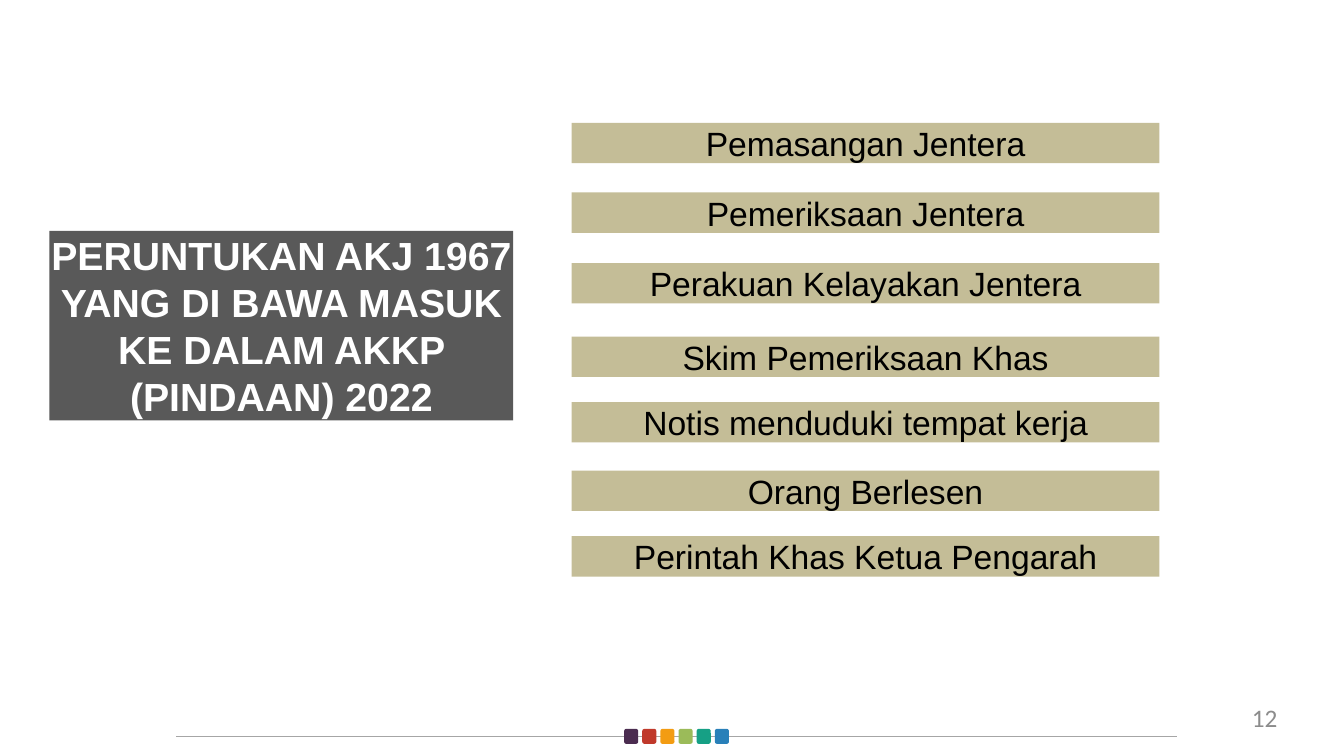
from dataclasses import dataclass

from lxml import etree
from pptx import Presentation
from pptx.dml.color import RGBColor
from pptx.enum.shapes import MSO_CONNECTOR, MSO_SHAPE
from pptx.enum.text import MSO_ANCHOR, MSO_AUTO_SIZE, PP_ALIGN
from pptx.oxml.ns import qn
from pptx.util import Inches, Pt

RECTANGLE = MSO_SHAPE.RECTANGLE
ROUNDED = MSO_SHAPE.ROUNDED_RECTANGLE
STRAIGHT = MSO_CONNECTOR.STRAIGHT
TOP = MSO_ANCHOR.TOP
NO_AUTOFIT = MSO_AUTO_SIZE.NONE
CENTER = PP_ALIGN.CENTER
RIGHT = PP_ALIGN.RIGHT
TITLE_ONLY = 5


@dataclass(frozen=True)
class Theme:
    heading_font: str = "Arial"
    number_font: str = "Calibri"
    title_size: int = 28
    bar_size: int = 24
    number_size: int = 18
    title_fill: str = "595959"
    title_text: str = "FFFFFF"
    bar_fill: str = "C4BD97"
    bar_text: str = "000000"
    number_text: str = "8C8C8C"
    rule: str = "A6A6A6"
    dots: tuple = ("4B2C50", "C0392B", "F39C12", "9BBB59", "16A085", "2980B9")


THEME = Theme()

TITLE = "PERUNTUKAN AKJ 1967 YANG DI BAWA MASUK KE DALAM AKKP (PINDAAN) 2022"
PROVISIONS = (
    (1.22, "Pemasangan Jentera"),
    (1.91, "Pemeriksaan Jentera"),
    (2.61, "Perakuan Kelayakan Jentera"),
    (3.34, "Skim Pemeriksaan Khas"),
    (3.99, "Notis menduduki tempat kerja"),
    (4.67, "Orang Berlesen"),
    (5.32, "Perintah Khas Ketua Pengarah"),
)


def paint(shape, color):
    shape.fill.solid()
    shape.fill.fore_color.rgb = RGBColor.from_string(color)


def write(shape, text, size, color, font=THEME.heading_font,
          alignment=CENTER, bold=False):
    frame = shape.text_frame
    frame.word_wrap = True
    frame.auto_size = NO_AUTOFIT
    frame.vertical_anchor = TOP
    frame.margin_left = frame.margin_right = 0
    frame.margin_top = frame.margin_bottom = 0
    frame.text = text
    paragraph = frame.paragraphs[0]
    paragraph.alignment = alignment
    paragraph.line_spacing = 1.0
    paragraph.font.name = font
    paragraph.font.size = Pt(size)
    paragraph.font.bold = bold
    paragraph.font.color.rgb = RGBColor.from_string(color)


def add_block(slide, kind, left, top, width, height, color):
    shape = slide.shapes.add_shape(
        kind, Inches(left), Inches(top), Inches(width), Inches(height))
    shape.shadow.inherit = False
    shape.line.fill.background()
    paint(shape, color)
    return shape


def format_title(slide):
    title = slide.shapes.title
    title.left, title.top = Inches(0.49), Inches(2.29)
    title.width, title.height = Inches(4.6), Inches(1.88)
    paint(title, THEME.title_fill)
    write(title, TITLE, THEME.title_size, THEME.title_text, bold=True)


def add_provision(slide, top, text):
    bar = add_block(slide, RECTANGLE, 5.67, top, 5.83, 0.4, THEME.bar_fill)
    write(bar, text, THEME.bar_size, THEME.bar_text)


def add_page_number(slide, number):
    box = slide.shapes.add_textbox(
        Inches(9.6), Inches(6.97), Inches(3.07), Inches(0.3))
    write(box, number, THEME.number_size, THEME.number_text,
          font=THEME.number_font, alignment=RIGHT)


def add_footer(slide):
    rule = slide.shapes.add_connector(
        STRAIGHT, Inches(1.75), Inches(7.31), Inches(11.67), Inches(7.31))
    rule.line.color.rgb = RGBColor.from_string(THEME.rule)
    rule.line.width = Pt(0.75)
    etree.SubElement(rule._element.spPr, qn("a:effectLst"))
    for index, color in enumerate(THEME.dots):
        add_block(slide, ROUNDED, 6.19 + 0.18 * index, 7.23, 0.14, 0.15, color)


def main():
    presentation = Presentation()
    presentation.slide_width = Inches(13.33)
    presentation.slide_height = Inches(7.5)
    slide = presentation.slides.add_slide(presentation.slide_layouts[TITLE_ONLY])
    format_title(slide)
    for top, text in PROVISIONS:
        add_provision(slide, top, text)
    add_page_number(slide, "12")
    add_footer(slide)
    presentation.save("out.pptx")


if __name__ == "__main__":
    main()
